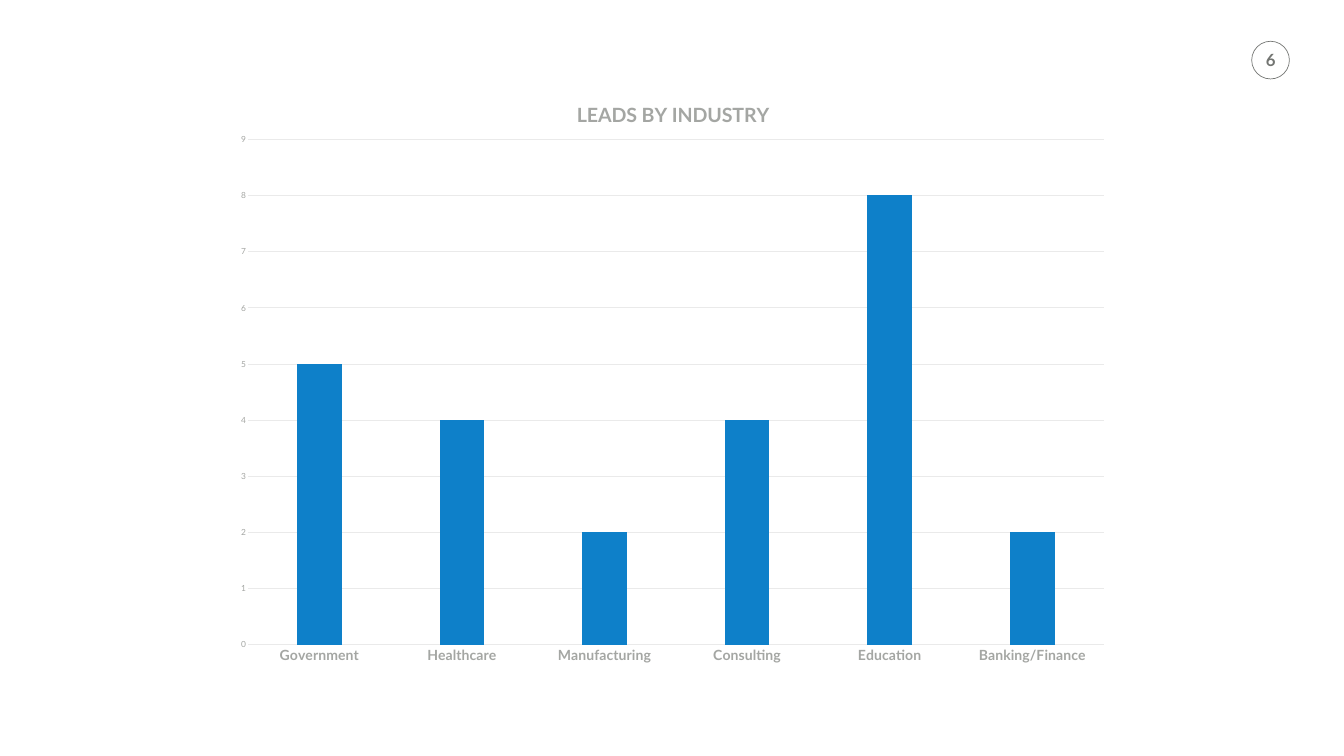
from pptx import Presentation
from pptx.chart.data import CategoryChartData
from pptx.dml.color import RGBColor
from pptx.enum.chart import XL_CHART_TYPE as ChartType, XL_TICK_MARK as TickMark
from pptx.enum.shapes import MSO_SHAPE as Shape
from pptx.enum.text import MSO_ANCHOR as Anchor, PP_ALIGN as Align
from pptx.oxml import parse_xml
from pptx.oxml.ns import nsdecls, qn
from pptx.util import Cm, Pt

WHITE = RGBColor(0xFF, 0xFF, 0xFF)
DARK_GREY = RGBColor(0x73, 0x75, 0x72)
MID_GREY = RGBColor(0xA4, 0xA6, 0xA3)
LIGHT_GREY = RGBColor(0xEA, 0xEA, 0xEA)
BLUE = RGBColor(0x0E, 0x80, 0xC9)

LEADS = {
    "Government": 5,
    "Healthcare": 4,
    "Manufacturing": 2,
    "Consulting": 4,
    "Education": 8,
    "Banking/Finance": 2,
}


def style_font(font, size, color, bold=False, name="Lato"):
    font.name, font.size, font.bold = name, Pt(size), bold
    font.color.rgb = color


def write(frame, text, *, size, color, bold=False, align=Align.CENTER):
    """Put one formatted paragraph into a text frame."""
    paragraph = frame.paragraphs[0]
    paragraph.alignment = align
    run = paragraph.add_run()
    run.text = text
    style_font(run.font, size, color, bold)


def place(element, index, inner=False, **fractions):
    """Give a chart part a fixed layout, as fractions of the chart."""
    for old in element.findall(qn("c:layout")):
        element.remove(old)
    target = '<c:layoutTarget val="inner"/>' if inner else ""
    modes = "".join(f'<c:{axis}Mode val="edge"/>' for axis in "xy")
    values = "".join(f'<c:{key} val="{value}"/>' for key, value in fractions.items())
    element.insert(index, parse_xml(
        f'<c:layout {nsdecls("c")}><c:manualLayout>{target}{modes}{values}'
        "</c:manualLayout></c:layout>"))


class SlideBuilder:
    """Holds the current slide and the line style."""

    def __init__(self, slide, line_width=0.75):
        self.slide = slide
        self.line_width = Pt(line_width)
        slide.background.fill.solid()
        slide.background.fill.fore_color.rgb = WHITE

    def text(self, left, top, width, height, text, **text_format):
        box = self.slide.shapes.add_textbox(Cm(left), Cm(top), Cm(width), Cm(height))
        frame = box.text_frame
        frame.word_wrap = False
        frame.vertical_anchor = Anchor.MIDDLE
        write(frame, text, **text_format)

    def ring(self, left, top, diameter, color):
        shape = self.slide.shapes.add_shape(
            Shape.OVAL, Cm(left), Cm(top), Cm(diameter), Cm(diameter))
        shape.shadow.inherit = False
        shape.fill.background()
        shape.line.color.rgb = color
        shape.line.width = Pt(1)

    def rule(self, line):
        line.color.rgb = LIGHT_GREY
        line.width = self.line_width

    def column_chart(self, left, top, width, height, title, values):
        data = CategoryChartData()
        data.categories = list(values)
        data.add_series("Series 1", list(values.values()))
        chart = self.slide.shapes.add_chart(
            ChartType.COLUMN_CLUSTERED,
            Cm(left), Cm(top), Cm(width), Cm(height), data).chart
        style_font(chart.font, 10, DARK_GREY)
        chart.has_legend = False

        # Title
        chart.has_title = True
        write(chart.chart_title.text_frame, title, size=28, color=MID_GREY, bold=True)

        # Columns
        plot = chart.plots[0]
        plot.gap_width, plot.overlap = 219, -27
        plot.vary_by_categories = False
        fill = plot.series[0].format.fill
        fill.solid()
        fill.fore_color.rgb = BLUE

        # Axes
        for axis, size, bold in ((chart.category_axis, 20, True),
                                 (chart.value_axis, 12, False)):
            axis.major_tick_mark = axis.minor_tick_mark = TickMark.NONE
            style_font(axis.tick_labels.font, size, MID_GREY, bold)
        self.rule(chart.category_axis.format.line)
        value_axis = chart.value_axis
        value_axis.format.line.fill.background()
        value_axis.minimum_scale, value_axis.maximum_scale = 0, 9
        value_axis.major_unit = 1
        value_axis.has_major_gridlines = True
        self.rule(value_axis.major_gridlines.format.line)

        # Positions inside the chart
        chart_part = chart._chartSpace.find(qn("c:chart"))
        place(chart_part.find(qn("c:title")), 1, x=0.39, y=0.03)
        place(chart_part.find(qn("c:plotArea")), 0, inner=True,
              x=0.027, y=0.1, w=0.955, h=0.846)


def main():
    presentation = Presentation()
    presentation.slide_width, presentation.slide_height = Cm(67.72), Cm(38.1)
    builder = SlideBuilder(presentation.slides.add_slide(presentation.slide_layouts[6]))

    # Page number
    builder.text(63.04, 2.25, 1.98, 1.55, "6", size=24, color=DARK_GREY, bold=True)
    builder.ring(63.07, 2.08, 1.9, DARK_GREY)

    # Leads chart
    builder.column_chart(11.28, 4.01, 45.14, 30.1, "LEADS BY INDUSTRY", LEADS)

    presentation.save("out.pptx")


if __name__ == "__main__":
    main()
